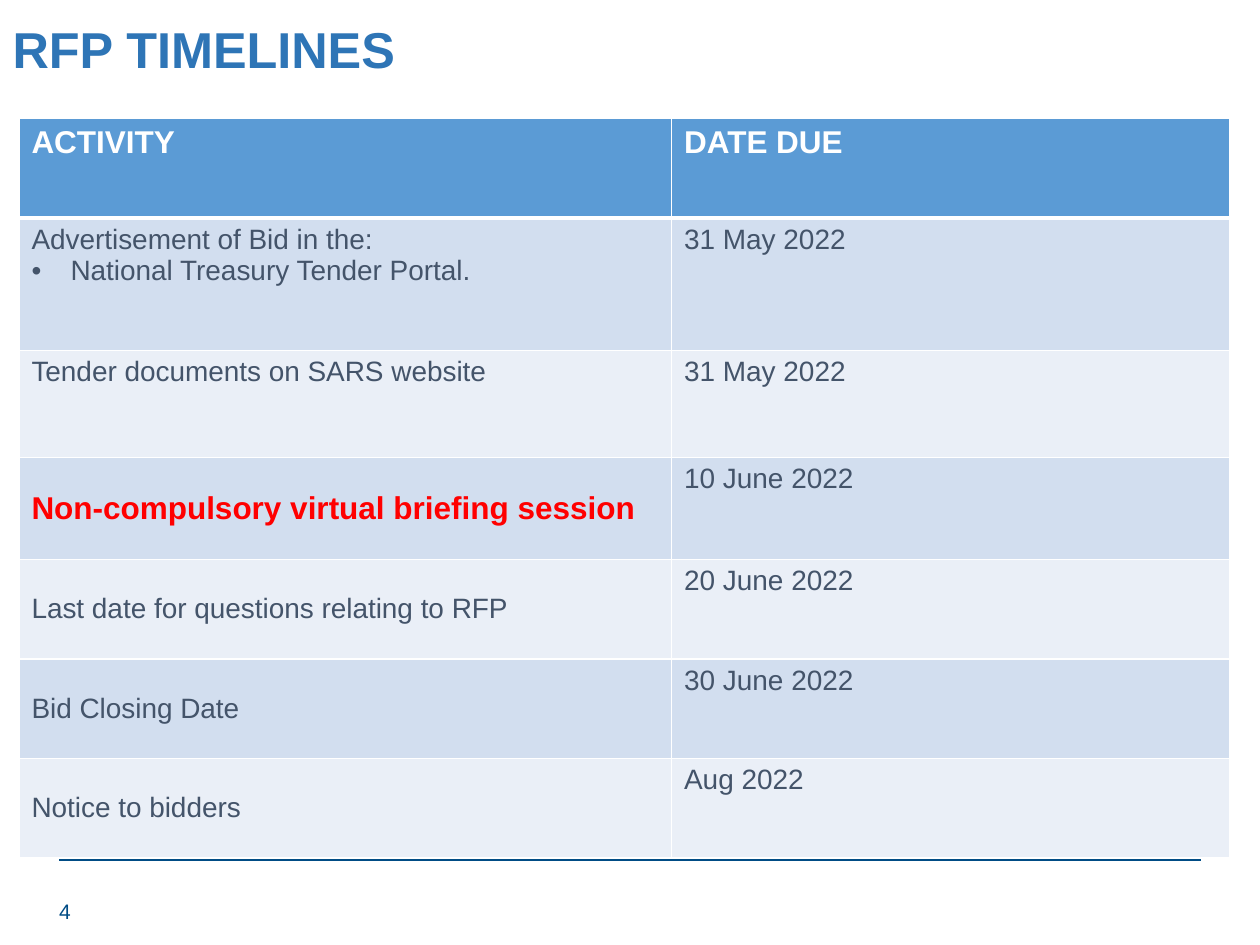
"""Build the RFP timelines slide."""
from lxml import etree
from pptx import Presentation
from pptx.dml.color import RGBColor
from pptx.enum.shapes import MSO_CONNECTOR
from pptx.enum.text import MSO_ANCHOR, PP_ALIGN
from pptx.oxml.ns import qn
from pptx.util import Inches, Pt

TOP, MIDDLE = MSO_ANCHOR.TOP, MSO_ANCHOR.MIDDLE
LEFT = PP_ALIGN.LEFT
STRAIGHT = MSO_CONNECTOR.STRAIGHT

COLORS = {
    "title": "2E75B6", "navy": "004C85", "white": "FFFFFF", "header": "5B9BD5",
    "odd": "D2DEEF", "even": "EAEFF7", "body": "44546A", "alert": "FF0000",
}
COLUMN_WIDTHS = [5.18, 4.43]
HEADINGS = ["ACTIVITY", "DATE DUE"]
TIMELINE = [
    (1.05, TOP, ["Advertisement of Bid in the:", "• National Treasury Tender Portal."], "31 May 2022"),
    (0.85, TOP, ["Tender documents on SARS website"], "31 May 2022"),
    (0.81, MIDDLE, ["Non-compulsory virtual briefing session"], "10 June 2022"),
    (0.79, MIDDLE, ["Last date for questions relating to RFP"], "20 June 2022"),
    (0.79, MIDDLE, ["Bid Closing Date"], "30 June 2022"),
    (0.79, MIDDLE, ["Notice to bidders"], "Aug 2022"),
]
HEADER_HEIGHT = 0.79
HIGHLIGHTED_ROW = 3


class TimelineSlide:
    """Hold the slide style and add each kind of element."""

    def __init__(self, deck):
        self.font = "Arial"
        self.slide = deck.slides.add_slide(deck.slide_layouts[5])

    def rgb(self, name):
        return RGBColor.from_string(COLORS[name])

    def add_text(self, paragraph, text, size, color, bold=False):
        paragraph.alignment = LEFT
        run = paragraph.add_run()
        run.text = text
        run.font.name = self.font
        run.font.size = Pt(size)
        run.font.bold = bold
        run.font.color.rgb = self.rgb(color)

    def title(self, text, left, top, width, height):
        heading = self.slide.shapes.title
        heading.left, heading.top = Inches(left), Inches(top)
        heading.width, heading.height = Inches(width), Inches(height)
        frame = heading.text_frame
        frame.vertical_anchor = MIDDLE
        frame.word_wrap = True
        frame.paragraphs[0].line_spacing = 0.9
        self.add_text(frame.paragraphs[0], text, 28.8, "title", True)

    def text(self, text, left, top, width, height):
        box = self.slide.shapes.add_textbox(
            Inches(left), Inches(top), Inches(width), Inches(height))
        box.text_frame.word_wrap = True
        box.text_frame.vertical_anchor = MIDDLE
        self.add_text(box.text_frame.paragraphs[0], text, 12, "navy")

    def rule(self, left, right, y):
        line = self.slide.shapes.add_connector(
            STRAIGHT, Inches(left), Inches(y), Inches(right), Inches(y))
        line.line.color.rgb = self.rgb("navy")
        line.line.width = Pt(2)
        etree.SubElement(line._element.spPr, qn("a:effectLst"))

    def table(self, left, top, widths, heights):
        table = self.slide.shapes.add_table(
            len(heights), len(widths), Inches(left), Inches(top),
            Inches(sum(widths)), Inches(sum(heights))).table
        for column, width in zip(table.columns, widths):
            column.width = Inches(width)
        for row, height in zip(table.rows, heights):
            row.height = Inches(height)
        return table

    def cell(self, cell, lines, fill, size, color, bold=False, anchor=TOP, edges=(1, 1)):
        cell.vertical_anchor = anchor
        self.borders(cell, *edges)
        cell.fill.solid()
        cell.fill.fore_color.rgb = self.rgb(fill)
        frame = cell.text_frame
        for index, line in enumerate(lines):
            paragraph = frame.add_paragraph() if index else frame.paragraphs[0]
            if line.startswith("• "):
                self.bullet(paragraph)
            self.add_text(paragraph, line.removeprefix("• "), size, color, bold)

    def bullet(self, paragraph):
        properties = paragraph._p.get_or_add_pPr()
        properties.set("marL", str(Inches(0.31)))
        properties.set("indent", str(-Inches(0.31)))
        etree.SubElement(properties, qn("a:buFont"), typeface=self.font)
        etree.SubElement(properties, qn("a:buChar"), char="•")

    def borders(self, cell, top, bottom):
        properties = cell._tc.get_or_add_tcPr()
        for side, points in (("L", 1), ("R", 1), ("T", top), ("B", bottom)):
            edge = etree.SubElement(properties, qn(f"a:ln{side}"), w=str(Pt(points)))
            fill = etree.SubElement(edge, qn("a:solidFill"))
            etree.SubElement(fill, qn("a:srgbClr"), val=COLORS["white"])


def main():
    deck = Presentation()
    deck.slide_width, deck.slide_height = Inches(10), Inches(7.5)
    page = TimelineSlide(deck)
    page.rule(0.47, 9.53, 6.82)
    page.title("RFP TIMELINES", 0, 0.12, 8.62, 0.58)
    page.text("4", 0.37, 7.03, 2.25, 0.4)

    heights = [HEADER_HEIGHT] + [entry[0] for entry in TIMELINE]
    schedule = page.table(0.15, 0.94, COLUMN_WIDTHS, heights)
    for column, heading in enumerate(HEADINGS):
        page.cell(schedule.cell(0, column), [heading], "header", 18, "white", True, edges=(1, 3))
    for row, (_, anchor, activity, due) in enumerate(TIMELINE, 1):
        band = "odd" if row % 2 else "even"
        edges = (3, 1) if row == 1 else (1, 1)
        emphasis = (18, "alert", True) if row == HIGHLIGHTED_ROW else (16, "body", False)
        page.cell(schedule.cell(row, 0), activity, band, *emphasis, anchor, edges)
        page.cell(schedule.cell(row, 1), [due], band, 16, "body", edges=edges)

    deck.save("out.pptx")


if __name__ == "__main__":
    main()
